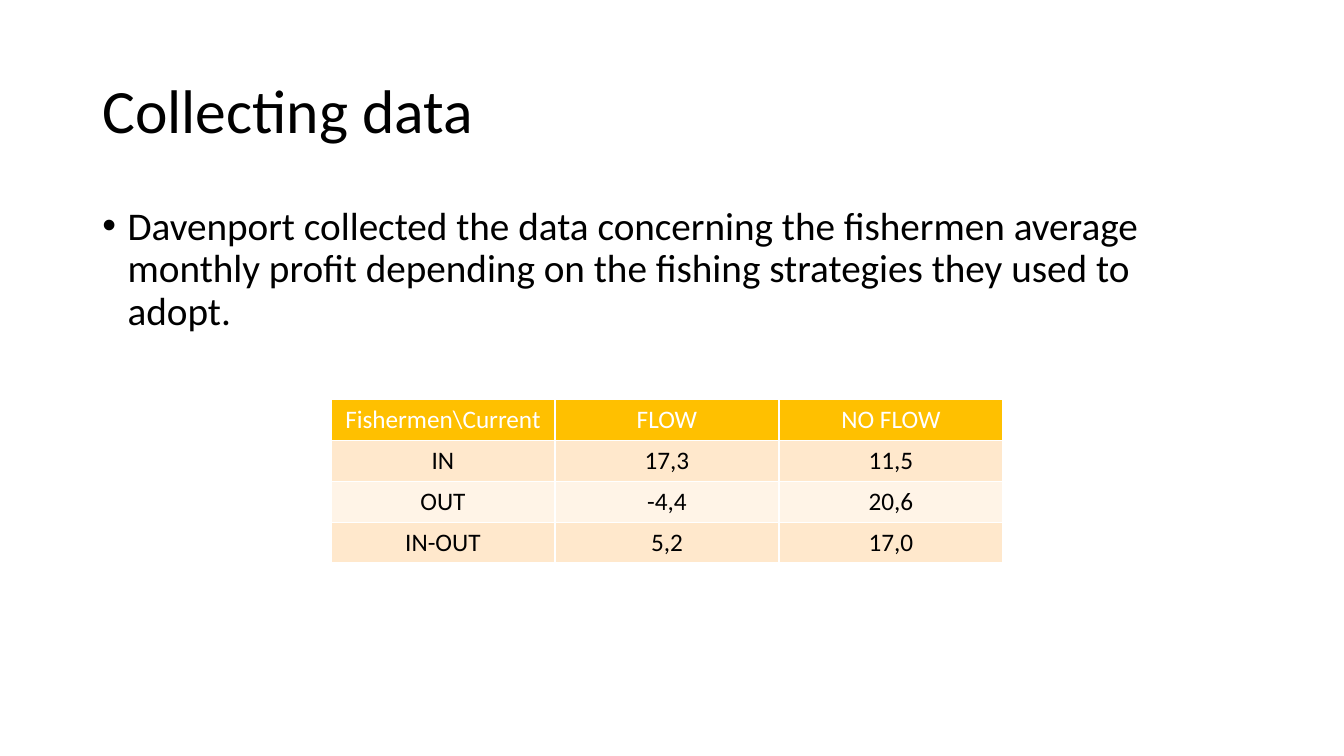
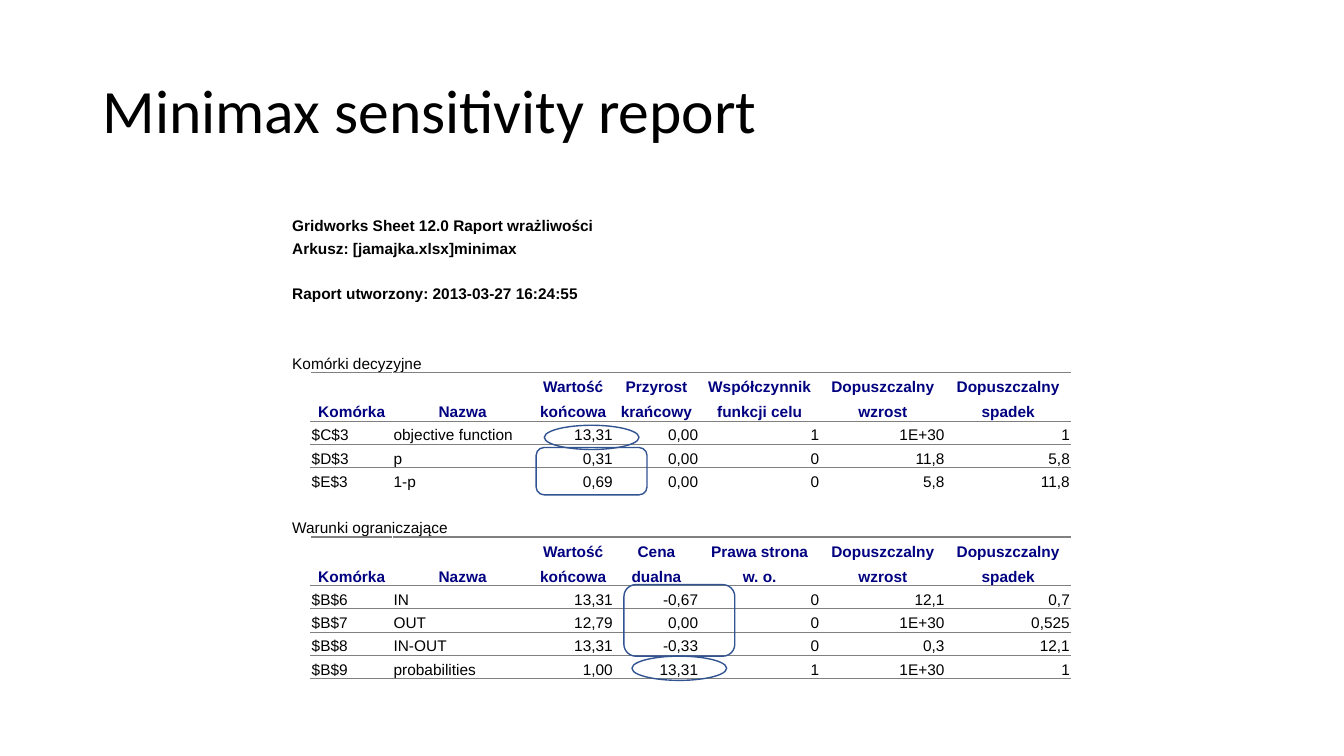
from lxml import etree
from pptx import Presentation
from pptx.dml.color import RGBColor
from pptx.enum import shapes, text
from pptx.oxml import ns
from pptx.util import Pt

BLACK, WHITE, NAVY, GRAY = "000000", "FFFFFF", "000080", "808080"
GOLD, PEACH, CREAM, BLUE = "FFC000", "FFE8CC", "FFF4E7", "325491"
LEFT, CENTER, RIGHT = text.PP_ALIGN.LEFT, text.PP_ALIGN.CENTER, text.PP_ALIGN.RIGHT


def style(paragraph, face, size, colour=BLACK, bold=False, align=LEFT):
    paragraph.alignment = align
    for run in paragraph.runs:
        run.font.name, run.font.size, run.font.bold = face, Pt(size), bold
        run.font.color.rgb = RGBColor.from_string(colour)
    if not paragraph.runs:
        etree.SubElement(paragraph._p, ns.qn("a:endParaRPr"), sz=str(size * 100))


def border(cell, sides, colour, width):
    props = cell._tc.get_or_add_tcPr()
    for position, side in enumerate(sides):
        line = etree.Element(ns.qn("a:ln" + side), w=str(Pt(width)))
        fill = etree.SubElement(line, ns.qn("a:solidFill"))
        etree.SubElement(fill, ns.qn("a:srgbClr"), val=colour)
        props.insert(position, line)


prs = Presentation()
prs.slide_width, prs.slide_height = Pt(960), Pt(540)

pages = []
for heading, layout in (("Collecting data", 1), ("Minimax sensitivity report", 5)):
    page = prs.slides.add_slide(prs.slide_layouts[layout])
    title = page.shapes.title
    title.left, title.top, title.width, title.height = Pt(66), Pt(28.8), Pt(828), Pt(104.4)
    title.text_frame.text = heading
    title.text_frame.vertical_anchor = text.MSO_ANCHOR.MIDDLE
    title.text_frame.paragraphs[0].line_spacing = 0.9
    style(title.text_frame.paragraphs[0], "Calibri", 44)
    pages.append(page)
collecting, sensitivity = pages

body = collecting.placeholders[1]
body.left, body.top, body.width, body.height = Pt(66), Pt(144), Pt(828), Pt(342.7)
body.text_frame.text = (
    "Davenport collected the data concerning the fishermen average monthly profit "
    "depending on the fishing strategies they used to adopt."
)
statement = body.text_frame.paragraphs[0]
statement.line_spacing, statement.space_before = 0.9, Pt(10)
style(statement, "Calibri", 28)
statement._p.get_or_add_pPr().set("marL", str(Pt(18)))
statement._p.get_or_add_pPr().set("indent", str(Pt(-18)))

profits = [
    ("Fishermen\\Current", "FLOW", "NO FLOW"),
    ("IN", "17,3", "11,5"),
    ("OUT", "-4,4", "20,6"),
    ("IN-OUT", "5,2", "17,0"),
]
profit_table = collecting.shapes.add_table(4, 3, Pt(236.4), Pt(285.4), Pt(480), Pt(116.8)).table
for r, profit_row in enumerate(profits):
    for c, value in enumerate(profit_row):
        cell = profit_table.cell(r, c)
        cell.text_frame.text = value
        style(cell.text_frame.paragraphs[0], "Calibri", 18, BLACK if r else WHITE, align=CENTER)
        cell.fill.solid()
        cell.fill.fore_color.rgb = RGBColor.from_string((GOLD, PEACH, CREAM, PEACH)[r])
        border(cell, "LRTB", WHITE, 1)

report = [
    ["Gridworks Sheet 12.0 Raport wrażliwości"],
    ["Arkusz: [jamajka.xlsx]minimax"],
    ["Raport utworzony: 2013-03-27 16:24:55"],
    [],
    [],
    ["Komórki decyzyjne"],
    ["", "", "", "Wartość", "Przyrost", "Współczynnik", "Dopuszczalny", "Dopuszczalny"],
    ["", "Komórka", "Nazwa", "końcowa", "krańcowy", "funkcji celu", "wzrost", "spadek"],
    ["", "$C$3", "objective function", "13,31", "0,00", "1", "1E+30", "1"],
    ["", "$D$3", "p", "0,31", "0,00", "0", "11,8", "5,8"],
    ["", "$E$3", "1-p", "0,69", "0,00", "0", "5,8", "11,8"],
    [],
    ["Warunki ograniczające"],
    ["", "", "", "Wartość", "Cena", "Prawa strona", "Dopuszczalny", "Dopuszczalny"],
    ["", "Komórka", "Nazwa", "końcowa", "dualna", "w. o.", "wzrost", "spadek"],
    ["", "$B$6", "IN", "13,31", "-0,67", "0", "12,1", "0,7"],
    ["", "$B$7", "OUT", "12,79", "0,00", "0", "1E+30", "0,525"],
    ["", "$B$8", "IN-OUT", "13,31", "-0,33", "0", "0,3", "12,1"],
    ["", "$B$9", "probabilities", "1,00", "13,31", "1", "1E+30", "1"],
]
column_widths = [14, 58.5, 100, 58, 61, 86.5, 89.5, 89.5]
row_heights = {2: 32, 7: 18, 14: 18}
merged_to = {0: 4, 1: 3, 2: 3, 5: 2, 12: 2}
upper_heads, lower_heads = (6, 13), (7, 14)
last_rows = (10, 18)

report_table = sensitivity.shapes.add_table(
    len(report), len(column_widths), Pt(208), Pt(151.2), Pt(sum(column_widths)), Pt(333)
).table
report_table.first_row = report_table.horz_banding = False
for c, width in enumerate(column_widths):
    report_table.columns[c].width = Pt(width)
for r, report_row in enumerate(report):
    report_table.rows[r].height = Pt(row_heights.get(r, 16.6))
    is_head = r in upper_heads + lower_heads
    is_data = len(report_row) == len(column_widths) and not is_head
    for c in range(len(column_widths)):
        cell = report_table.cell(r, c)
        cell.fill.background()
        cell.margin_left = cell.margin_right = cell.margin_top = Pt(0.7)
        cell.margin_bottom = 0
        cell.vertical_anchor = text.MSO_ANCHOR.BOTTOM
        cell.text_frame.text = report_row[c] if c < len(report_row) else ""
        align = CENTER if is_head else RIGHT if is_data and c > 2 else LEFT
        style(cell.text_frame.paragraphs[0], "Arial", 11, NAVY if is_head else BLACK, is_head or r < 3, align)
        if c and r in upper_heads:
            border(cell, "T", GRAY, 1)
        elif c and r in lower_heads:
            border(cell, "B", GRAY, 0.5)
        elif c and is_data:
            border(cell, "T", GRAY, 0.5)
            if r in last_rows:
                border(cell, "B", GRAY, 1)
                cell._tc.tcPr.insert(0, cell._tc.tcPr.find(ns.qn("a:lnT")))
for r, last in merged_to.items():
    report_table.cell(r, 0).merge(report_table.cell(r, last))

ROUNDED, OVAL = shapes.MSO_SHAPE.ROUNDED_RECTANGLE, shapes.MSO_SHAPE.OVAL
for outline, x, y, width, height in (
    (ROUNDED, 445.7, 417.6, 79.2, 51.1),
    (ROUNDED, 383, 319.7, 79.2, 33.8),
    (OVAL, 388.8, 303.8, 67.7, 17.3),
    (OVAL, 451.4, 468.7, 67.7, 17.3),
):
    highlight = sensitivity.shapes.add_shape(outline, Pt(x), Pt(y), Pt(width), Pt(height))
    highlight.shadow.inherit = False
    highlight.fill.background()
    highlight.line.color.rgb = RGBColor.from_string(BLUE)
    highlight.line.width = Pt(1)

prs.save("out.pptx")
